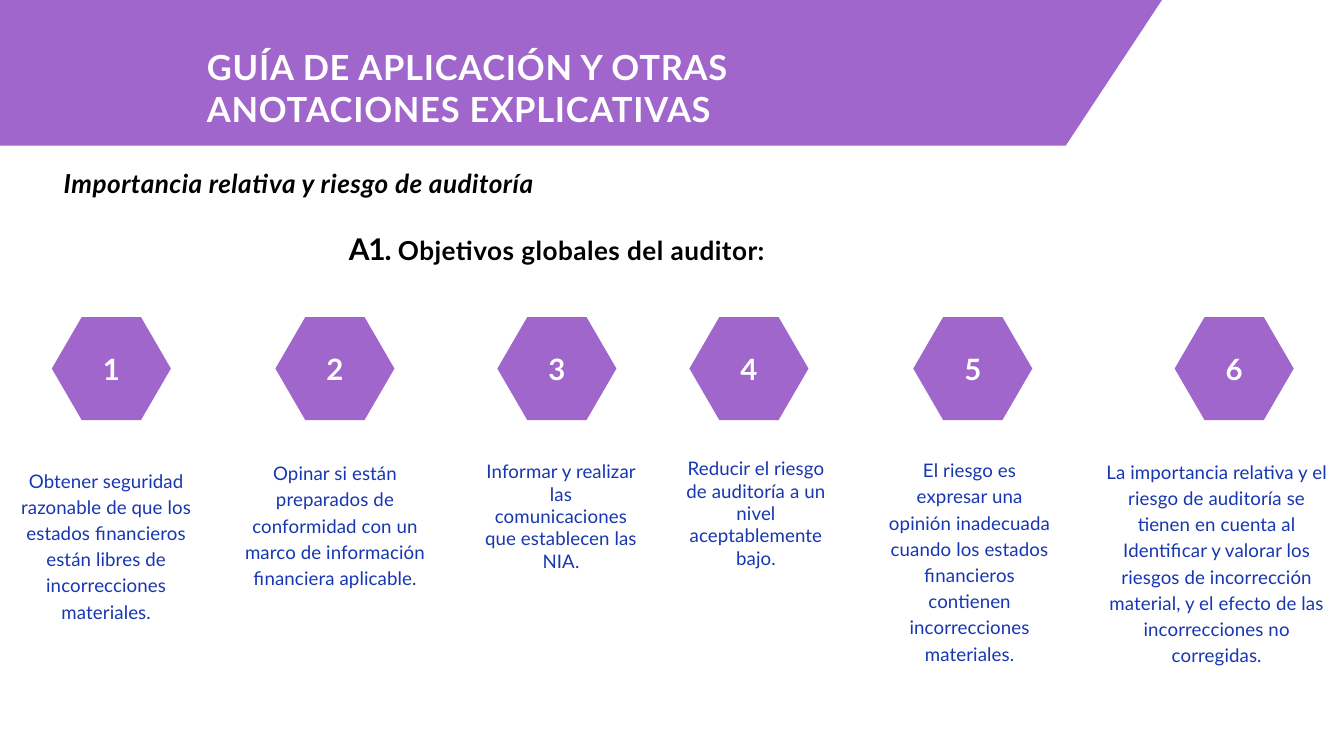
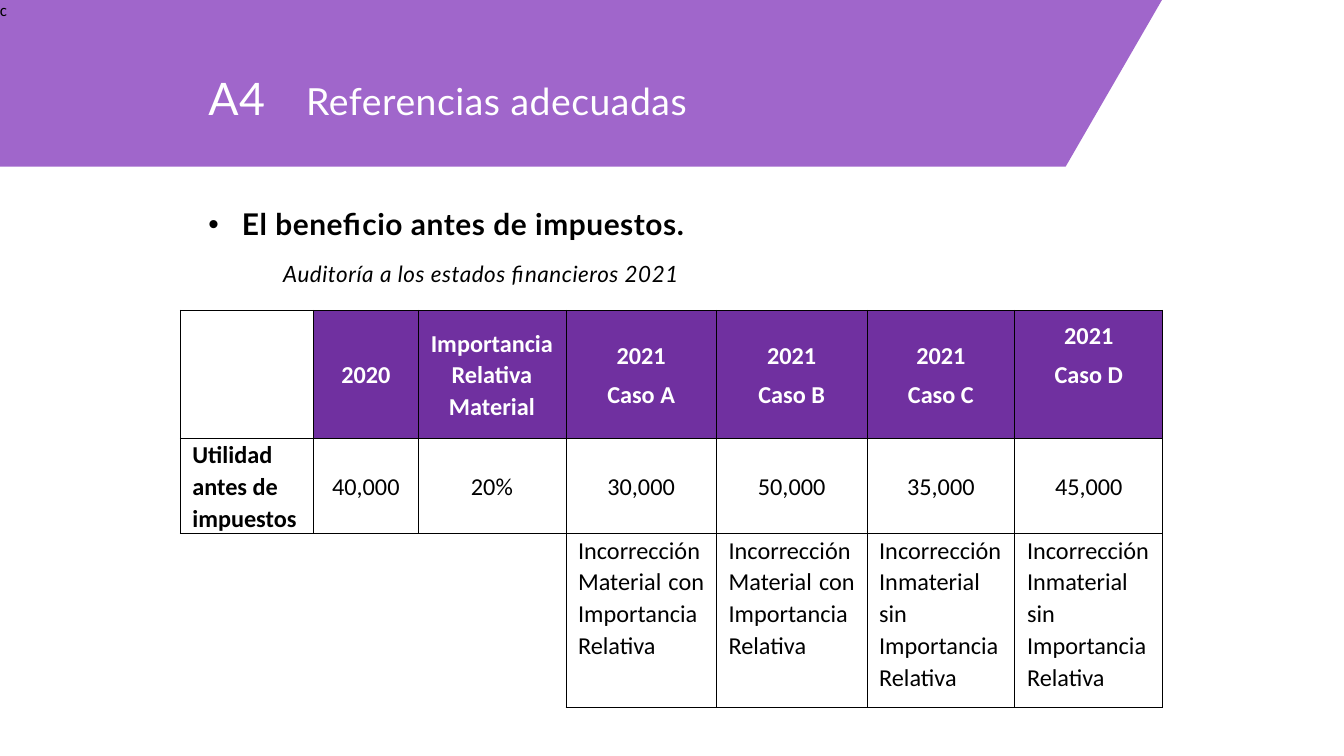
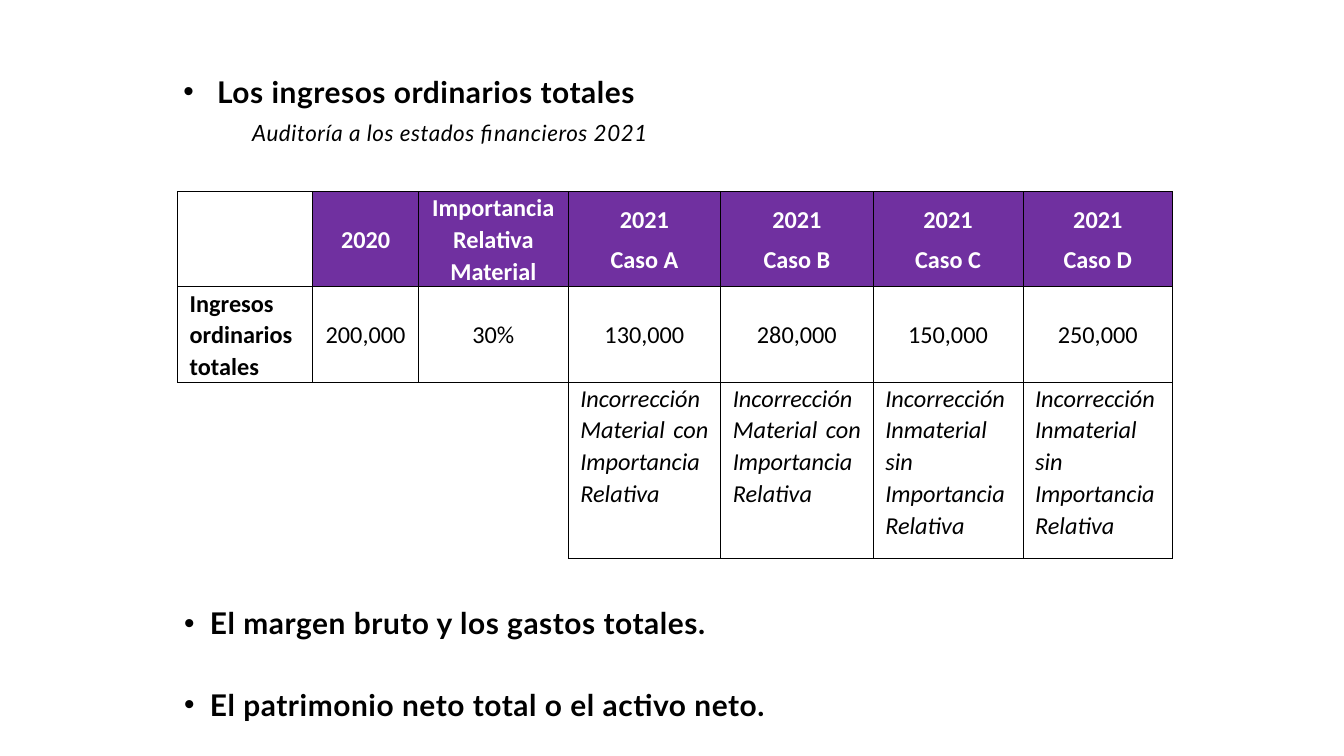
from lxml.etree import SubElement
from pptx import Presentation
from pptx.dml.color import RGBColor
from pptx.enum.shapes import MSO_SHAPE
from pptx.enum.text import MSO_ANCHOR, MSO_AUTO_SIZE, PP_ALIGN
from pptx.oxml.ns import qn
from pptx.util import Cm, Pt

LILAC = RGBColor(0xA0, 0x66, 0xCB)
PURPLE = RGBColor(0x70, 0x30, 0xA0)
BLUE = RGBColor(0x17, 0x36, 0xB1)
WHITE = RGBColor(0xFF, 0xFF, 0xFF)
BLACK = RGBColor(0, 0, 0)

FRAME = dict(word_wrap=True, auto_size=MSO_AUTO_SIZE.NONE,
             vertical_anchor=MSO_ANCHOR.TOP)
BARE = FRAME | dict(margin_left=0, margin_right=0, margin_top=0, margin_bottom=0)
LEFT = dict(alignment=PP_ALIGN.LEFT, space_before=Pt(0))
MID = dict(alignment=PP_ALIGN.CENTER)
CELL = dict(line_spacing=1.07, space_after=Pt(8))

HEAD = dict(name="Lato", size=Pt(37), bold=True, color=WHITE, spc=0.85)
TOPIC = dict(name="Lato", size=Pt(28), bold=True, color=BLACK, spc=0.55)
POINT = TOPIC | dict(size=Pt(32), spc=0.6)
NOTE = dict(name="Lato", size=Pt(24), italic=True, color=BLACK, spc=0.6)
GOAL = dict(name="Lato", size=Pt(20), color=BLUE, spc=0.1)
GRID = dict(name="Calibri", size=Pt(26), color=BLACK)


def set_all(obj, vals):
    for key, val in vals.items():
        setattr(obj, key, val)


def write(frame, paras, font, para, dent=None):
    """Fill a frame; a paragraph is a string or a list of (text, font changes).

    dent is the hanging indent of a bullet, if there is one.
    """
    for num, runs in enumerate(paras):
        line = frame.add_paragraph() if num else frame.paragraphs[0]
        set_all(line, para)
        if dent:
            props = line._p.get_or_add_pPr()
            props.set("marL", str(dent))
            props.set("indent", str(-dent))
            SubElement(props, qn("a:buFont"), typeface="Arial")
            SubElement(props, qn("a:buChar"), char="•")
        for text, more in [(runs, {})] if isinstance(runs, str) else runs:
            run = line.add_run()
            run.text = text
            look = font | more
            run.font.color.rgb = look.pop("color")
            gap = look.pop("spc", 0)
            set_all(run.font, look)
            if gap:
                run._r.get_or_add_rPr().set("spc", str(round(gap * 100)))


prs = Presentation()
prs.slide_width, prs.slide_height = Cm(50.8), Cm(28.58)
goals = prs.slides.add_slide(prs.slide_layouts[5])
profit = prs.slides.add_slide(prs.slide_layouts[1])
income = prs.slides.add_slide(prs.slide_layouts[1])

# Bands behind the titles
for slide, deep, mark in ((goals, 5.51, ""), (profit, 6.3, "c")):
    pen = slide.shapes.build_freeform(0, 0)
    pen.add_line_segments([(Cm(43.92), 0), (Cm(40.28), Cm(deep)), (0, Cm(deep))])
    band = pen.convert_to_shape()
    band.shadow.inherit = False
    band.fill.solid()
    band.fill.fore_color.rgb = LILAC
    band.line.fill.background()
    if mark:
        set_all(band.text_frame, BARE)
        write(band.text_frame, [mark], GRID | dict(size=Pt(18)), LEFT)
    slide.shapes.title.element.addprevious(band.element)

# Titles and lists in placeholders: shape, place, frame, text, font, paragraph, indent
HOLDERS = (
    (goals.shapes.title, (7.82, 1.22, 27.79, 3.66), BARE | dict(margin_top=Cm(0.53)),
     ["GUÍA DE APLICACIÓN Y OTRAS ANOTACIONES EXPLICATIVAS"],
     HEAD, LEFT | dict(line_spacing=Pt(44.3)), None),
    (profit.shapes.title, (7.62, 2.54, 23.42, 3.81), FRAME,
     [[("A4", dict(size=Pt(48))), ("\tReferencias adecuadas", {})]],
     HEAD | dict(size=Pt(40), bold=False, spc=0.6), LEFT, None),
    (profit.placeholders[1], (7.62, 7.65, 23.29, 1.64), FRAME,
     ["El beneficio antes de impuestos."], POINT, LEFT, Cm(1.27)),
    (income.shapes.title, (6.68, 2.64, 23.42, 1.63), FRAME,
     ["Los ingresos ordinarios totales"], POINT, LEFT, Cm(1.27)),
    (income.placeholders[1], (6.71, 22.65, 25.4, 4.7), FRAME,
     ["El margen bruto y los gastos totales.",
      "El patrimonio neto total o el activo neto."],
     POINT, LEFT | dict(line_spacing=1.07), Cm(0.97)),
)
for shape, spot, box, paras, font, para, dent in HOLDERS:
    set_all(shape, dict(zip(("left", "top", "width", "height"), map(Cm, spot))))
    set_all(shape.text_frame, box)
    write(shape.text_frame, paras, font, para, dent)

tabs = SubElement(profit.shapes.title.text_frame.paragraphs[0]._p.get_or_add_pPr(),
                  qn("a:tabLst"))
SubElement(tabs, qn("a:tab"), pos=str(Cm(3.7)), algn="l")
income.placeholders[1].text_frame.paragraphs[1].space_before = Pt(46)

# Free lines of text
AUDIT = "Auditoría a los estados financieros 2021"
LINES = (
    (goals, (2.41, 6.32, 32.77, 1.6), BARE, ["Importancia relativa y riesgo de auditoría"],
     TOPIC | dict(italic=True), LEFT),
    (goals, (7.57, 8.71, 26.97, 2.44), BARE,
     [[("A1. ", dict(size=Pt(32), spc=-1.2)), ("Objetivos globales del auditor:", {})]],
     TOPIC, MID),
    (profit, (9.83, 9.65, 16.71, 1.27), FRAME, [AUDIT], NOTE, MID | CELL),
    (income, (8.66, 4.32, 16.71, 1.27), FRAME, [AUDIT], NOTE, MID | CELL),
)
for slide, spot, box, paras, font, para in LINES:
    frame = slide.shapes.add_textbox(*map(Cm, spot)).text_frame
    set_all(frame, box)
    write(frame, paras, font, para)

# Numbered goals: hexagon left, text place, line spacing, text
GOALS = (
    (1.96, (0, 17.48, 8.03, 7.2), 1.17,
     "Obtener seguridad razonable de que los estados financieros están libres de "
     "incorrecciones materiales."),
    (10.41, (8.64, 17.2, 8.05, 5.18), 1.17,
     "Opinar si están preparados de conformidad con un marco de información "
     "financiera aplicable."),
    (18.8, (18.03, 17.27, 6.35, 4.52), 1.0,
     "Informar y realizar las comunicaciones que establecen las NIA."),
    (26.06, (25.4, 17.15, 6.35, 4.52), 1.0,
     "Reducir el riesgo de auditoría a un nivel aceptablemente bajo."),
    (34.52, (33.22, 17.09, 6.86, 8.18), 1.17,
     "El riesgo es expresar una opinión inadecuada cuando los estados financieros "
     "contienen incorrecciones materiales."),
    (44.4, (41.33, 17.15, 9.32, 8.18), 1.17,
     "La importancia relativa y el riesgo de auditoría se tienen en cuenta al "
     "Identificar y valorar los riesgos de incorrección material, y el efecto de las "
     "incorrecciones no corregidas."),
)
for num, (left, spot, space, text) in enumerate(GOALS, 1):
    hexa = goals.shapes.add_shape(MSO_SHAPE.HEXAGON, Cm(left), Cm(11.99), Cm(4.5), Cm(3.89))
    hexa.adjustments[0] = 0.29
    hexa.shadow.inherit = False
    hexa.fill.solid()
    hexa.fill.fore_color.rgb = LILAC
    hexa.line.fill.background()
    set_all(hexa.text_frame, BARE | dict(vertical_anchor=MSO_ANCHOR.MIDDLE))
    write(hexa.text_frame, [str(num)], HEAD | dict(size=Pt(31.5), spc=0), MID)
    frame = goals.shapes.add_textbox(*map(Cm, spot)).text_frame
    set_all(frame, FRAME)
    write(frame, [text], GOAL, MID | dict(line_spacing=space))

# Case tables
HEADS = ["", "2020", "Importancia Relativa Material"] + [f"2021\nCaso {c}" for c in "ABCD"]
WITH = "Incorrección Material con Importancia Relativa"
SANS = "Incorrección Inmaterial sin Importancia Relativa"
ENDS = ["", "", "", WITH, WITH, SANS, SANS]
WIDE = (5.05, 3.94, 5.59, 5.69, 5.69, 5.59, 5.59)
TABLES = (
    (profit, 6.81, 11.73, 1, (4.85, 3.51, 6.55), False,
     ["Utilidad antes de impuestos", "40,000", "20%", "30,000", "50,000", "35,000", "45,000"]),
    (income, 6.71, 7.24, 1.013, (3.56, 3.56, 6.65), True,
     ["Ingresos ordinarios totales", "200,000", "30%", "130,000", "280,000", "150,000",
      "250,000"]),
)
for slide, left, top, scale, highs, slant, vals in TABLES:
    grid = slide.shapes.add_table(3, 7, Cm(left), Cm(top), Cm(sum(WIDE) * scale),
                                  Cm(sum(highs))).table
    grid.first_row = grid.horz_banding = False
    for col, wide in zip(grid.columns, WIDE):
        col.width = Cm(wide * scale)
    for row, high in zip(grid.rows, highs):
        row.height = Cm(high)
    for r, texts in enumerate((HEADS, vals, ENDS)):
        for c, text in enumerate(texts):
            cell = grid.cell(r, c)
            label = r == 1 and c == 0
            mid = r < 2 and not label
            set_all(cell, dict(margin_left=Cm(0.46), margin_right=Cm(0.46),
                               margin_top=0, margin_bottom=0,
                               vertical_anchor=MSO_ANCHOR.MIDDLE if mid else MSO_ANCHOR.TOP))
            sides = "LRTB" if text or r == 0 else "RT" if c == 2 else "T"
            props = cell._tc.get_or_add_tcPr()
            for side in "LRTB":
                edge = SubElement(props, qn(f"a:ln{side}"), w=str(Pt(1)))
                if side in sides:
                    ink = SubElement(edge, qn("a:solidFill"))
                    SubElement(ink, qn("a:srgbClr"), val=str(BLACK))
                else:
                    SubElement(edge, qn("a:noFill"))
            if r == 0 and text:
                cell.fill.solid()
                cell.fill.fore_color.rgb = PURPLE
            else:
                cell.fill.background()
            if text:
                side = PP_ALIGN.CENTER if mid else PP_ALIGN.LEFT if label else PP_ALIGN.JUSTIFY
                write(cell.text_frame, text.split("\n"),
                      GRID | dict(bold=r == 0 or label, italic=slant and r == 2,
                                  color=WHITE if r == 0 else BLACK),
                      CELL | dict(alignment=side))
    if slide is profit:
        grid.cell(0, 6).margin_bottom = Cm(1.47)

prs.save("out.pptx")
